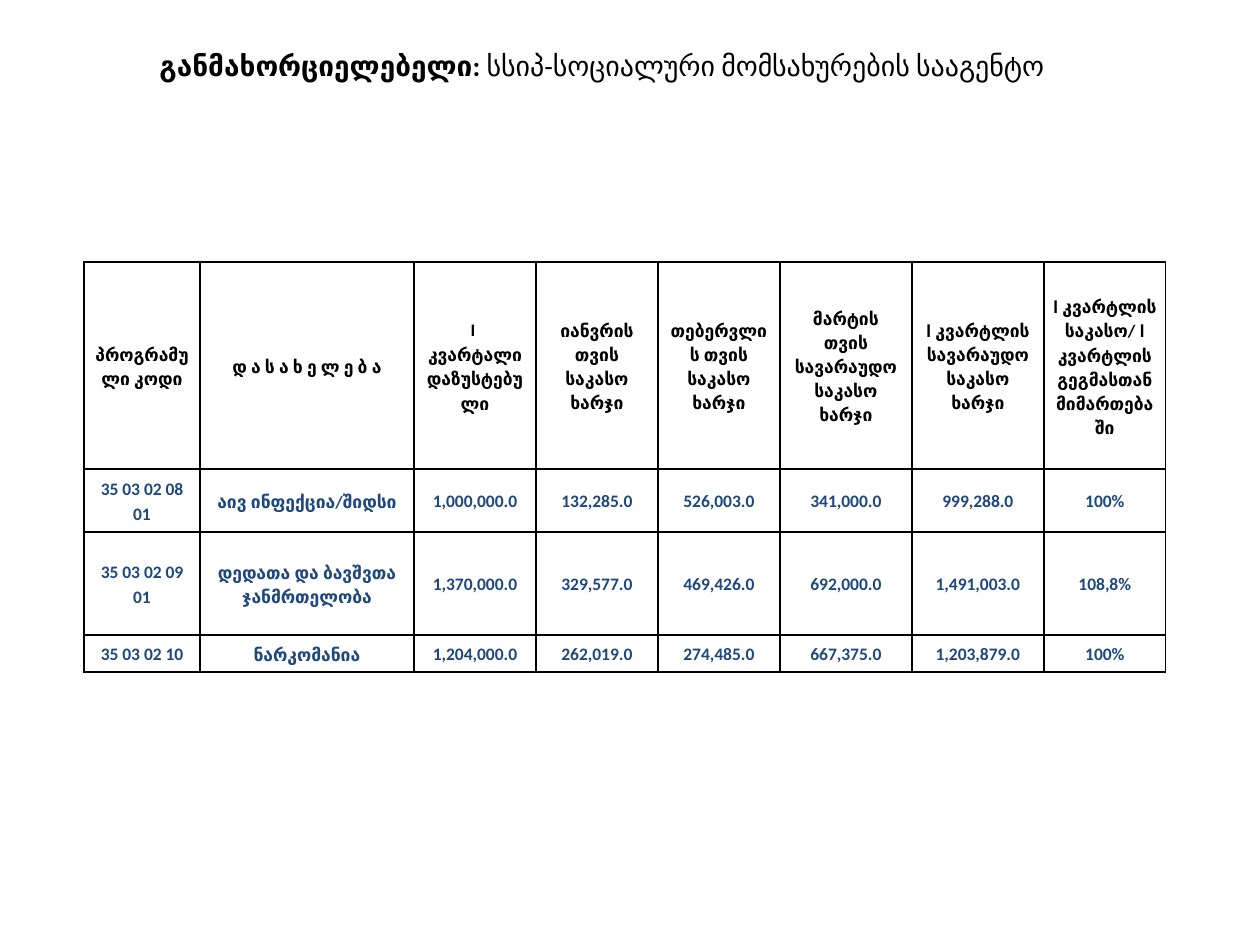
from lxml.etree import SubElement
from pptx import Presentation
from pptx.dml.color import RGBColor
from pptx.enum.text import MSO_ANCHOR as Anchor, MSO_AUTO_SIZE as AutoSize, PP_ALIGN as Align
from pptx.oxml.ns import qn
from pptx.util import Pt

PX = 914400 // 126
BLACK, NAVY, WHITE = "000000", "1F497D", "FFFFFF"


def add_span(para, text, font, size, color, bold):
    span = para.add_run()
    span.text = text
    span.font.name = font
    span.font.size = Pt(size)
    span.font.bold = bold
    span.font.color.rgb = RGBColor.from_string(color)


def add_borders(cell, color, width):
    props = cell._tc.get_or_add_tcPr()
    for side in ("a:lnL", "a:lnR", "a:lnT", "a:lnB"):
        line = SubElement(props, qn(side), w=str(Pt(width)))
        fill = SubElement(line, qn("a:solidFill"))
        SubElement(fill, qn("a:srgbClr"), val=color)


deck = Presentation()
deck.slide_width, deck.slide_height = 1260 * PX, 945 * PX
page = deck.slides.add_slide(deck.slide_layouts[6])

# Title
box = page.shapes.add_textbox(147 * PX, 42 * PX, 966 * PX, 47 * PX)
box.text_frame.word_wrap = True
box.text_frame.auto_size = AutoSize.SHAPE_TO_FIT_TEXT
para = box.text_frame.paragraphs[0]
add_span(para, "განმახორციელებელი: ", "Calibri", 16, BLACK, True)
add_span(para, "სსიპ-სოციალური მომსახურების სააგენტო", "Calibri", 16, BLACK, False)

# Table content; a bar separates parts set in different fonts
rows = [
    ["პროგრამული კოდი", "დ ა ს ა ხ ე ლ ე ბ ა", "I  |კვარტალი დაზუსტებული",
     "იანვრის თვის საკასო ხარჯი", "თებერვლის თვის საკასო ხარჯი",
     "მარტის თვის სავარაუდო საკასო ხარჯი", "I კვარტლის სავარაუდო საკასო ხარჯი",
     "I კვარტლის საკასო|/| I კვარტლის გეგმასთან მიმართებაში"],
    ["35 03 02 08 01", "აივ ინფექცია|/|შიდსი", "1,000,000.0", "132,285.0",
     "526,003.0", "341,000.0", "999,288.0", "100%"],
    ["35 03 02 09 01", "დედათა და ბავშვთა ჯანმრთელობა", "1,370,000.0", "329,577.0",
     "469,426.0", "692,000.0", "1,491,003.0", "108,8%"],
    ["35 03 02 10", "ნარკომანია", "1,204,000.0", "262,019.0",
     "274,485.0", "667,375.0", "1,203,879.0", "100%"],
]
widths = [116, 214, 122, 122, 122, 132, 132, 122]
heights = [207, 63, 103, 37]

# Table grid
table = page.shapes.add_table(len(rows), len(widths), 84 * PX, 262 * PX,
                              sum(widths) * PX, sum(heights) * PX).table
table.first_row = table.horz_banding = False
for column, width in zip(table.columns, widths):
    column.width = width * PX
for row, height in zip(table.rows, heights):
    row.height = height * PX

# Table cells
for r, texts in enumerate(rows):
    for c, text in enumerate(texts):
        cell = table.cell(r, c)
        cell.vertical_anchor = Anchor.MIDDLE
        cell.margin_left = cell.margin_right = 9 * PX
        cell.margin_top = cell.margin_bottom = 0
        add_borders(cell, BLACK, 1)
        if r == 0:
            cell.fill.solid()
            cell.fill.fore_color.rgb = RGBColor.from_string(WHITE)
        else:
            cell.fill.background()
        para = cell.text_frame.paragraphs[0]
        para.alignment = Align.CENTER
        para.line_spacing = 1.15
        for part in text.split("|"):
            georgian = any("ა" <= letter <= "ჰ" for letter in part)
            add_span(para, part, "Lato" if georgian else "Calibri", 10,
                     NAVY if r else BLACK, True)

deck.save("out.pptx")
